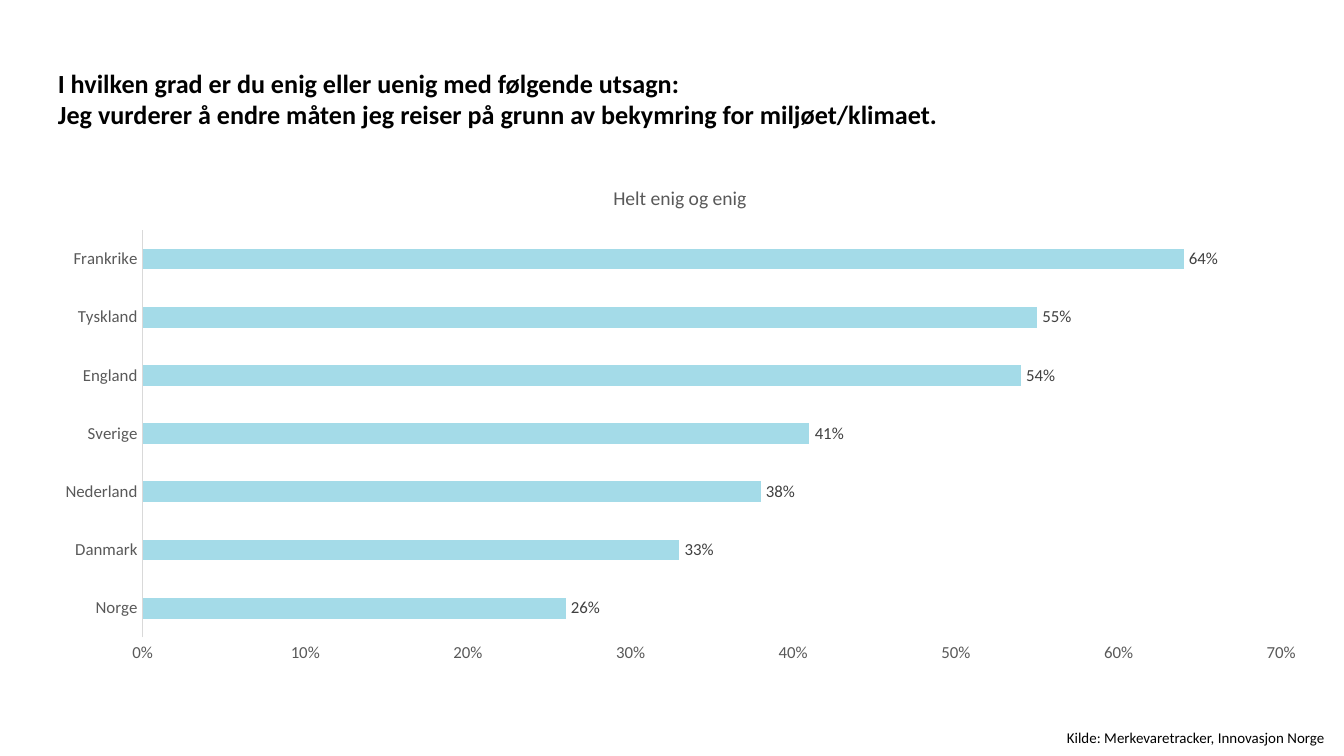
from dataclasses import dataclass

from lxml import etree
from pptx import Presentation
from pptx.chart.data import CategoryChartData
from pptx.dml.color import RGBColor
from pptx.enum.chart import XL_CHART_TYPE, XL_LABEL_POSITION, XL_TICK_MARK
from pptx.enum.text import MSO_ANCHOR, MSO_AUTO_SIZE, PP_ALIGN
from pptx.util import Pt

BAR_CLUSTERED = XL_CHART_TYPE.BAR_CLUSTERED
OUTSIDE_END = XL_LABEL_POSITION.OUTSIDE_END
NO_TICK = XL_TICK_MARK.NONE
TOP = MSO_ANCHOR.TOP
GROW = MSO_AUTO_SIZE.SHAPE_TO_FIT_TEXT
LEFT = PP_ALIGN.LEFT
TITLE_ONLY = 5
PERCENT = "0%"


@dataclass(frozen=True)
class Theme:
    font: str = "Calibri"
    text: str = "000000"
    white: str = "FFFFFF"
    axis_text: str = "595959"
    axis_line: str = "D9D9D9"
    label_text: str = "404040"
    bar: str = "A4DBE8"
    title_size: float = 14
    chart_title_size: float = 10.5
    chart_size: float = 9
    source_size: float = 8


@dataclass(frozen=True)
class Box:
    left: float
    top: float
    width: float
    height: float

    def place(self) -> tuple:
        return Pt(self.left), Pt(self.top), Pt(self.width), Pt(self.height)


@dataclass(frozen=True)
class Share:
    country: str
    value: float


THEME = Theme()
TITLE_BOX = Box(31, 36, 658, 34)
CHART_BOX = Box(21.6, 87.8, 685.4, 272.9)
SOURCE_BOX = Box(564.5, 386.6, 155.5, 17)
PLOT_AREA = {"x": 0.08, "y": 0.13, "w": 0.89, "h": 0.8}  # shares of the chart

TITLE_LINES = [
    "I hvilken grad er du enig eller uenig med følgende utsagn: ",
    "Jeg vurderer å endre måten jeg reiser på grunn av bekymring for miljøet/klimaet.",
]
SHARES = [
    Share("Norge", 0.26),
    Share("Danmark", 0.33),
    Share("Nederland", 0.38),
    Share("Sverige", 0.41),
    Share("England", 0.54),
    Share("Tyskland", 0.55),
    Share("Frankrike", 0.64),
]


def style_font(font, size: float, color: str, bold: bool = False) -> None:
    font.name = THEME.font
    font.size = Pt(size)
    font.bold = bold
    font.color.rgb = RGBColor.from_string(color)


def add_title(s) -> None:
    sp = s.shapes.title
    sp.left, sp.top, sp.width, sp.height = TITLE_BOX.place()
    sp.fill.solid()
    sp.fill.fore_color.rgb = RGBColor.from_string(THEME.white)
    tf = sp.text_frame
    tf.margin_left = tf.margin_top = tf.margin_right = tf.margin_bottom = 0
    tf.vertical_anchor = TOP
    tf.word_wrap = True
    tf.auto_size = GROW
    p = tf.paragraphs[0]
    p.alignment = LEFT
    p.line_spacing = 1.0
    for i, line in enumerate(TITLE_LINES):
        if i:
            p.add_line_break()
        r = p.add_run()
        r.text = line
        style_font(r.font, THEME.title_size, THEME.text, bold=True)


def add_source(s) -> None:
    tf = s.shapes.add_textbox(*SOURCE_BOX.place()).text_frame
    tf.word_wrap = False
    tf.auto_size = GROW
    r = tf.paragraphs[0].add_run()
    r.text = "Kilde: Merkevaretracker, Innovasjon Norge"
    style_font(r.font, THEME.source_size, THEME.text)


def style_axis(axis) -> None:
    axis.has_major_gridlines = False
    axis.major_tick_mark = axis.minor_tick_mark = NO_TICK
    style_font(axis.tick_labels.font, THEME.chart_size, THEME.axis_text)


def fix_plot_area(chart) -> None:
    """Give the inner plot area a manual layout."""
    plot_area = chart.plots[0]._element.getparent()
    ns = etree.QName(plot_area).namespace
    for old in plot_area.findall(f"{{{ns}}}layout"):
        plot_area.remove(old)
    layout = etree.Element(f"{{{ns}}}layout")
    manual = etree.SubElement(layout, f"{{{ns}}}manualLayout")
    settings = {"layoutTarget": "inner", "xMode": "edge", "yMode": "edge", **PLOT_AREA}
    for tag, value in settings.items():
        etree.SubElement(manual, f"{{{ns}}}{tag}").set("val", str(value))
    plot_area.insert(0, layout)


def add_share_chart(s) -> None:
    data = CategoryChartData(number_format=PERCENT)
    data.categories = [share.country for share in SHARES]
    data.add_series("Helt enig og enig", [share.value for share in SHARES])
    chart = s.shapes.add_chart(BAR_CLUSTERED, *CHART_BOX.place(), data).chart
    style_font(chart.font, THEME.chart_size, THEME.text)
    chart.has_legend = False

    # Chart title
    chart.has_title = True
    r = chart.chart_title.text_frame.paragraphs[0].add_run()
    r.text = "Helt enig og enig"
    style_font(r.font, THEME.chart_title_size, THEME.axis_text)
    chart.chart_title.include_in_layout = False

    # Axes
    for axis in (chart.category_axis, chart.value_axis):
        style_axis(axis)
    line = chart.category_axis.format.line
    line.color.rgb = RGBColor.from_string(THEME.axis_line)
    line.width = Pt(0.75)
    values = chart.value_axis
    values.format.line.fill.background()
    values.minimum_scale, values.maximum_scale, values.major_unit = 0, 0.7, 0.1
    values.tick_labels.number_format = PERCENT
    values.tick_labels.number_format_is_linked = False

    # Bars and their labels
    plot = chart.plots[0]
    plot.gap_width = 182
    plot.vary_by_categories = False
    fill = plot.series[0].format.fill
    fill.solid()
    fill.fore_color.rgb = RGBColor.from_string(THEME.bar)
    plot.has_data_labels = True
    labels = plot.data_labels
    labels.show_value = True
    labels.position = OUTSIDE_END
    labels.number_format = PERCENT
    labels.number_format_is_linked = False
    style_font(labels.font, THEME.chart_size, THEME.label_text)
    fix_plot_area(chart)


def main() -> None:
    prs = Presentation()
    prs.slide_width, prs.slide_height = Pt(720), Pt(405)
    s = prs.slides.add_slide(prs.slide_layouts[TITLE_ONLY])
    add_title(s)
    add_source(s)
    add_share_chart(s)
    prs.save("out.pptx")


if __name__ == "__main__":
    main()
